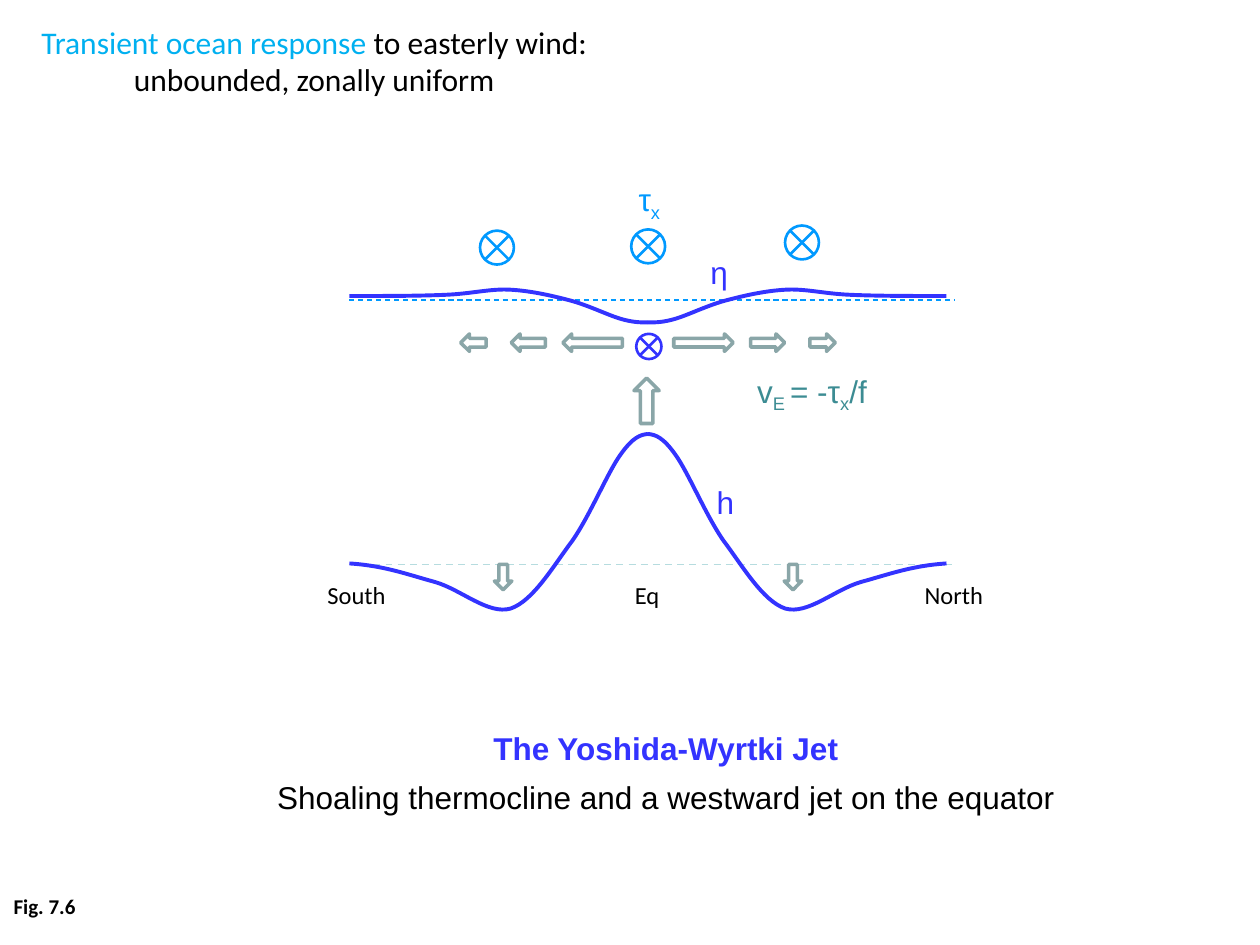
import pptx
import pptx.util
import pptx.dml.color
import pptx.enum.dml
import pptx.enum.shapes
import pptx.enum.text
import pptx.oxml
import pptx.oxml.ns

Pt = pptx.util.Pt
RGBColor = pptx.dml.color.RGBColor
Shape = pptx.enum.shapes.MSO_SHAPE
Align = pptx.enum.text.PP_ALIGN
qn = pptx.oxml.ns.qn

BLACK = RGBColor(0x00, 0x00, 0x00)
OCEAN = RGBColor(0x33, 0x33, 0xFF)
WIND = RGBColor(0x00, 0x99, 0xFF)
HEADING = RGBColor(0x00, 0xB0, 0xF0)
FLOW = RGBColor(0x8A, 0xA6, 0xA8)
EKMAN = RGBColor(0x3C, 0x8C, 0x93)
REST_DEPTH = RGBColor(0xB6, 0xDC, 0xDF)

EQUATOR = 370.3  # axis of symmetry

# Half curves from the equator outwards: a start, then Bezier triples
SURFACE = [(0, 184.3), (4.3, 184.3), (8.6, 184.3), (15.8, 182.2),
           (23, 180), (33.1, 175), (43.2, 172.1),
           (54, 169.2), (66.2, 166.3), (78.5, 165.6),
           (90, 164.9), (100.1, 167.8), (115.2, 168.5),
           (131, 169.2), (150.5, 169.2), (170.6, 169.2)]
THERMOCLINE = [(0, 248), (4.3, 248.4), (8.6, 249.8), (15.8, 260),
               (23, 270), (33.1, 294.5), (43.2, 309),
               (54, 323.3), (65.5, 343.4), (78.5, 347.8),
               (91.4, 351.4), (106.6, 337), (121.7, 332.6),
               (137.5, 328.3), (150.5, 323.3), (170.6, 322)]


class Diagram:
    font = "Arial"
    label_font = "Calibri"

    def __init__(self, slide):
        self.slide = slide

    def outline(self, shape, color, width):
        shape.shadow.inherit = False
        shape.fill.background()
        shape.line.color.rgb = color
        shape.line.width = Pt(width)

    def line(self, x1, y1, x2, y2, color, width, dashed=False, parent=None):
        connector = (parent or self.slide).shapes.add_connector(
            pptx.enum.shapes.MSO_CONNECTOR.STRAIGHT,
            Pt(x1), Pt(y1), Pt(x2), Pt(y2))
        connector.line.color.rgb = color
        connector.line.width = Pt(width)
        if dashed:
            connector.line.dash_style = pptx.enum.dml.MSO_LINE.DASH
        connector._element.spPr.append(
            pptx.oxml.parse_xml('<a:effectLst %s/>' % pptx.oxml.ns.nsdecls("a")))

    def into_page(self, x, y, size, color):
        """Circled cross: a vector pointing into the page."""
        group = self.slide.shapes.add_group_shape()
        circle = group.shapes.add_shape(
            Shape.OVAL, Pt(x - size / 2), Pt(y - size / 2), Pt(size), Pt(size))
        self.outline(circle, color, 1.5)
        arm = size * 0.36
        for side in (-arm, arm):
            self.line(x - side, y - arm, x + side, y + arm, color, 1.5, parent=group)

    def arrow(self, x, y, length, thickness, angle):
        arrow = self.slide.shapes.add_shape(
            Shape.RIGHT_ARROW, Pt(x - length / 2), Pt(y - thickness / 2),
            Pt(length), Pt(thickness))
        arrow.rotation = angle
        self.outline(arrow, FLOW, 2)

    def curve(self, half_curve, side):
        points = [(Pt(EQUATOR + side * x), Pt(y)) for x, y in half_curve]
        builder = self.slide.shapes.build_freeform(*points[0])
        builder.add_line_segments(points[1:], close=False)
        curve = builder.convert_to_shape()
        self.outline(curve, OCEAN, 2.25)
        # Merge each three straight segments into one Bezier segment
        outline_path = curve._element.find(".//" + qn("a:path"))
        segments = outline_path.findall(qn("a:lnTo"))
        for first in range(0, len(segments), 3):
            bezier = outline_path.makeelement(qn("a:cubicBezTo"), {})
            segments[first].addprevious(bezier)
            for segment in segments[first:first + 3]:
                bezier.append(segment[0])
                outline_path.remove(segment)

    def text(self, x, y, width, height, paragraphs, color=BLACK, size=18,
             font=None, bold=(), align=None, after=None, wrap=False):
        """Each paragraph is a list of (text, run colour, is subscript)."""
        frame = self.slide.shapes.add_textbox(
            Pt(x), Pt(y), Pt(width), Pt(height)).text_frame
        frame.word_wrap = wrap
        frame.auto_size = pptx.enum.text.MSO_AUTO_SIZE.SHAPE_TO_FIT_TEXT
        for index, runs in enumerate(paragraphs):
            paragraph = frame.add_paragraph() if index else frame.paragraphs[0]
            paragraph.alignment = align
            if after:
                paragraph.space_after = Pt(after)
            paragraph.font.name = font or self.font
            paragraph.font.size = Pt(size)
            paragraph.font.bold = index in bold
            colors = {run_color or color for _, run_color, _ in runs}
            if len(colors) == 1:
                paragraph.font.color.rgb = colors.pop()
            for content, run_color, subscript in runs:
                run = paragraph.add_run()
                run.text = content
                if len(runs) > 1 and run_color:
                    run.font.color.rgb = run_color
                if subscript:
                    run._r.get_or_add_rPr().set("baseline", "-25000")

    def label(self, x, y, width, height, content, **style):
        self.text(x, y, width, height, [[(content, None, False)]], **style)


def main():
    deck = pptx.Presentation()
    deck.slide_width, deck.slide_height = Pt(720), Pt(540)
    diagram = Diagram(deck.slides.add_slide(deck.slide_layouts[6]))

    # Title
    diagram.text(11.5, 9.4, 336.2, 51,
                 [[("Transient ocean response ", HEADING, False),
                   ("to easterly wind: unbounded, zonally uniform", BLACK, False)]],
                 font=diagram.label_font, align=Align.CENTER, after=6, wrap=True)

    # Rest levels, sea surface and thermocline
    diagram.line(199.5, 322.6, 545.8, 322.6, REST_DEPTH, 1, dashed=True)
    diagram.line(199.5, 171.4, 545.8, 171.4, WIND, 0.75, dashed=True)
    for half_curve in (SURFACE, THERMOCLINE):
        for side in (-1, 1):
            diagram.curve(half_curve, side)

    # Wind stress and equatorial jet
    for x, y in ((284, 141.5), (370.4, 140.8), (458.3, 138.6)):
        diagram.into_page(x, y, 19.4, WIND)
    diagram.into_page(370.8, 198, 14.4, OCEAN)

    # Ekman divergence, upwelling and downwelling
    for side, angle in ((1, 0), (-1, 180)):
        for offset, length in ((31.7, 34), (68.4, 19.5), (99.8, 14.5)):
            diagram.arrow(EQUATOR + side * offset, 195.8, length, 10, angle)
        diagram.arrow(EQUATOR + side * 82.8, 329.8, 14.5, 10, 90)
    diagram.arrow(369.5, 229, 26, 14.4, 270)

    # Symbols
    diagram.text(357.8, 99.4, 44.6, 45.4,
                 [[("τ", None, False), ("x", None, True)]], color=WIND)
    diagram.label(398.9, 141.1, 39.6, 29, "η", color=OCEAN, wrap=True)
    diagram.label(402.5, 272.2, 24.5, 29, "h", color=OCEAN)
    diagram.text(425.5, 208.8, 80.6, 29,
                 [[("v", None, False), ("E ", None, True), ("= -τ", None, False),
                   ("x", None, True), ("/f", None, False)]], color=EKMAN)

    # Latitudes
    for x, width, place in ((180, 75.6, "South"), (355.7, 44.6, "Eq"),
                            (521.3, 76.3, "North")):
        diagram.label(x, 327.6, width, 38, place, size=14, font=diagram.label_font)

    # Conclusion and figure number
    diagram.text(149, 413.3, 463, 85,
                 [[("The Yoshida-Wyrtki Jet", OCEAN, False)],
                  [("Shoaling thermocline and a westward jet on the equator",
                    BLACK, False)]],
                 bold=(0,), align=Align.CENTER, after=6)
    diagram.label(0.7, 506.9, 59.8, 21.6, "Fig. 7.6", size=12,
                  font=diagram.label_font, bold=(0,), wrap=True)

    deck.save("out.pptx")


if __name__ == "__main__":
    main()
